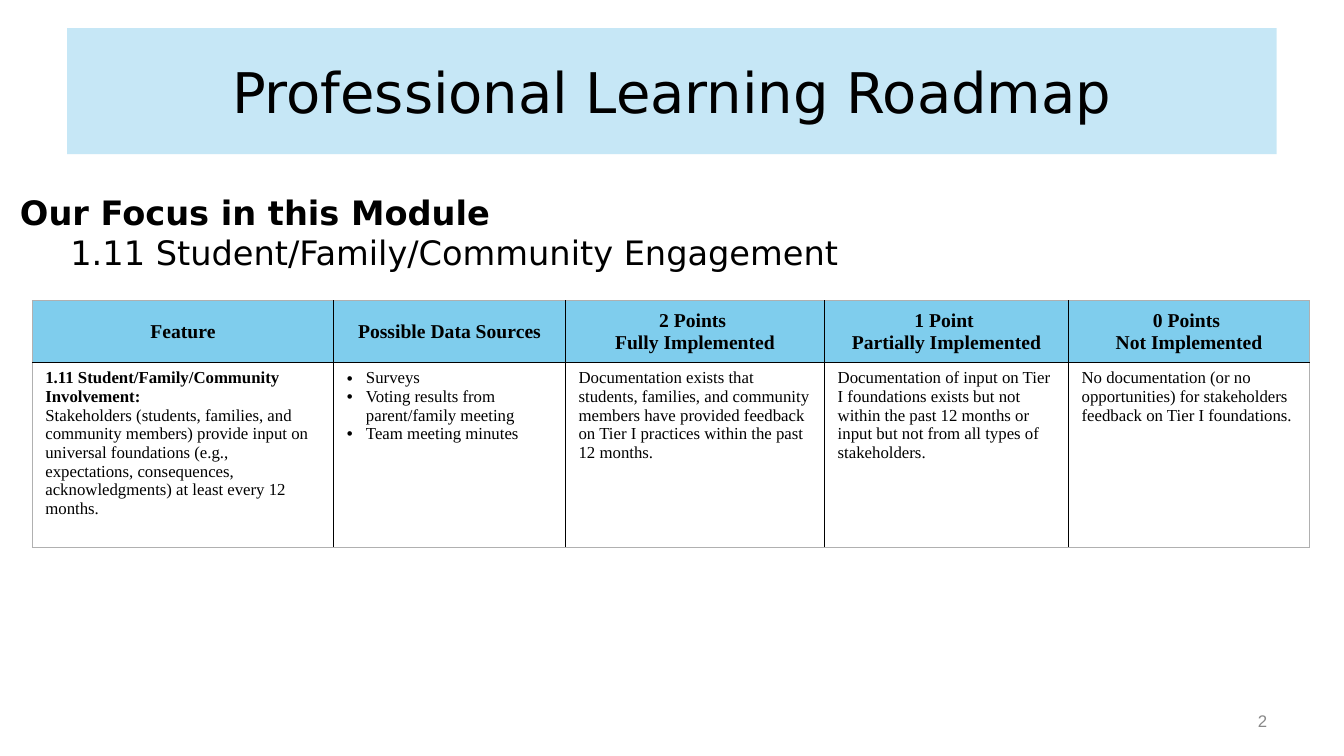
"""Builds the Professional Learning Roadmap slide with its scoring table."""
from dataclasses import dataclass

from lxml import etree
from pptx import Presentation
from pptx import util as u
from pptx.dml.color import RGBColor
from pptx.enum import shapes, text
from pptx.oxml.ns import qn

BLACK = RGBColor(0x00, 0x00, 0x00)
GREY = RGBColor(0x88, 0x88, 0x88)
EDGE_GREY = RGBColor(0xB0, 0xB0, 0xB0)
BANNER_BLUE = RGBColor(0xA9, 0xDC, 0xF2)
HEADER_BLUE = RGBColor(0x7F, 0xCD, 0xED)

WIDTH, HEIGHT = u.Inches(13.33), u.Inches(7.5)
SANS, SERIF = "DejaVu Sans", "Times New Roman"
COLUMN_SHARES = (22.43, 17.25, 19.28, 18.15, 17.93)
ROW_SHARES = (8.27, 24.4)
LEFT, CENTER, RIGHT = text.PP_ALIGN.LEFT, text.PP_ALIGN.CENTER, text.PP_ALIGN.RIGHT


@dataclass(frozen=True)
class Line:
    """One paragraph with a single run."""
    words: str
    size: float
    font: str = SERIF
    bold: bool = False
    align: text.PP_ALIGN = LEFT
    color: RGBColor = BLACK
    indent: float = 0
    bullet: bool = False


@dataclass(frozen=True)
class Area:
    """A rectangle in percent of the slide's width and height."""
    left: float
    top: float
    width: float
    height: float

    def box(self) -> tuple[int, int, int, int]:
        """Return the rectangle in slide units."""
        return across(self.left), down(self.top), across(self.width), down(self.height)


def across(share: float) -> int:
    """Turn a percentage of the slide's width into a length."""
    return u.Emu(round(WIDTH * share / 100))


def down(share: float) -> int:
    """Turn a percentage of the slide's height into a length."""
    return u.Emu(round(HEIGHT * share / 100))


def header(*words: str) -> list[Line]:
    """Return the centred bold lines of a header cell."""
    return [Line(part, 14, bold=True, align=CENTER) for part in words]


FOCUS = [
    Line("Our Focus in this Module", 24, SANS, bold=True),
    Line("1.11 Student/Family/Community Engagement", 24, SANS, indent=0.5),
]
RUBRIC = [
    [
        header("Feature"),
        header("Possible Data Sources"),
        header("2 Points ", "Fully Implemented"),
        header("1 Point ", "Partially Implemented"),
        header("0 Points ", "Not Implemented"),
    ],
    [
        [Line("1.11 Student/Family/Community Involvement:", 12, bold=True),
         Line("Stakeholders (students, families, and community members) provide input on "
              "universal foundations (e.g., expectations, consequences, acknowledgments) "
              "at least every 12 months.", 12)],
        [Line(source, 12, indent=0.19, bullet=True) for source in (
            "Surveys", "Voting results from parent/family meeting", "Team meeting minutes")],
        [Line("Documentation exists that students, families, and community members have "
              "provided feedback on Tier I practices within the past 12 months.", 12)],
        [Line("Documentation of input on Tier I foundations exists but not within the past "
              "12 months or input but not from all types of stakeholders.", 12)],
        [Line("No documentation (or no opportunities) for stakeholders feedback on "
              "Tier I foundations.", 12)],
    ],
]


def write(frame, lines: list[Line]) -> None:
    """Fill a text frame with the given lines."""
    frame.word_wrap = True
    for index, line in enumerate(lines):
        paragraph = frame.add_paragraph() if index else frame.paragraphs[0]
        paragraph.alignment = line.align
        props = paragraph._p.get_or_add_pPr()
        if line.indent:
            props.set("marL", str(u.Inches(line.indent)))
        if line.bullet:
            props.set("indent", str(-u.Inches(line.indent)))
            etree.SubElement(props, qn("a:buFont"), typeface="Arial")
            etree.SubElement(props, qn("a:buChar"), char="•")
        run = paragraph.add_run()
        run.text = line.words
        run.font.size = u.Pt(line.size)
        run.font.name = line.font
        run.font.bold = line.bold
        run.font.color.rgb = line.color


def add_words(slide, area: Area, lines: list[Line], anchor: text.MSO_ANCHOR,
              margin: float) -> None:
    """Add a text box with the given top and bottom margin."""
    frame = slide.shapes.add_textbox(*area.box()).text_frame
    frame.vertical_anchor = anchor
    frame.margin_top = frame.margin_bottom = u.Inches(margin)
    write(frame, lines)


def add_banner(slide, area: Area, title: Line) -> None:
    """Add the translucent title banner."""
    banner = slide.shapes.add_shape(shapes.MSO_SHAPE.RECTANGLE, *area.box())
    banner.shadow.inherit = False
    banner.fill.solid()
    banner.fill.fore_color.rgb = BANNER_BLUE
    tint = banner._element.spPr.find(qn("a:solidFill"))[0]
    etree.SubElement(tint, qn("a:alpha"), val="66000")
    banner.line.fill.background()
    banner.text_frame.vertical_anchor = text.MSO_ANCHOR.MIDDLE
    write(banner.text_frame, [title])


def add_borders(cell, outer_sides: dict[str, bool]) -> None:
    """Draw grey borders on the table's edge and black ones inside."""
    for side, outer in outer_sides.items():
        border = etree.SubElement(cell._tc.get_or_add_tcPr(), qn(f"a:ln{side}"),
                                  w=str(u.Pt(0.5 if outer else 1)))
        fill = etree.SubElement(border, qn("a:solidFill"))
        etree.SubElement(fill, qn("a:srgbClr"), val=str(EDGE_GREY if outer else BLACK))


def add_rubric(slide, left: float, top: float) -> None:
    """Add the scoring table."""
    area = Area(left, top, sum(COLUMN_SHARES), sum(ROW_SHARES))
    last_row, last_column = len(ROW_SHARES) - 1, len(COLUMN_SHARES) - 1
    rubric = slide.shapes.add_table(last_row + 1, last_column + 1, *area.box()).table
    rubric.first_row = rubric.horz_banding = False
    for column, share in zip(rubric.columns, COLUMN_SHARES):
        column.width = across(share)
    for row, share in zip(rubric.rows, ROW_SHARES):
        row.height = down(share)
    for r, row_lines in enumerate(RUBRIC):
        for c, lines in enumerate(row_lines):
            cell = rubric.cell(r, c)
            cell.margin_left = cell.margin_right = u.Inches(0.13)
            cell.margin_top = cell.margin_bottom = u.Inches(0.06)
            add_borders(cell, {"L": c == 0, "R": c == last_column,
                               "T": r == 0, "B": r == last_row})
            if r == 0:
                cell.vertical_anchor = text.MSO_ANCHOR.MIDDLE
                cell.fill.solid()
                cell.fill.fore_color.rgb = HEADER_BLUE
            else:
                cell.vertical_anchor = text.MSO_ANCHOR.TOP
                cell.fill.background()
            write(cell.text_frame, lines)


def main() -> None:
    """Build and save the slide."""
    deck = Presentation()
    deck.slide_width, deck.slide_height = WIDTH, HEIGHT
    slide = deck.slides.add_slide(deck.slide_layouts[6])
    add_words(slide, Area(71.7, 92.67, 23.33, 5.33),
              [Line("2", 12, "Arial", align=RIGHT, color=GREY)], text.MSO_ANCHOR.MIDDLE, 0.05)
    add_banner(slide, Area(5, 3.73, 90, 16.67),
               Line("Professional Learning Roadmap", 40, SANS, align=CENTER))
    add_words(slide, Area(0.75, 24, 66.24, 12.93), FOCUS, text.MSO_ANCHOR.TOP, 0.1)
    add_rubric(slide, 2.4, 39.73)
    deck.save("out.pptx")


if __name__ == "__main__":
    main()
